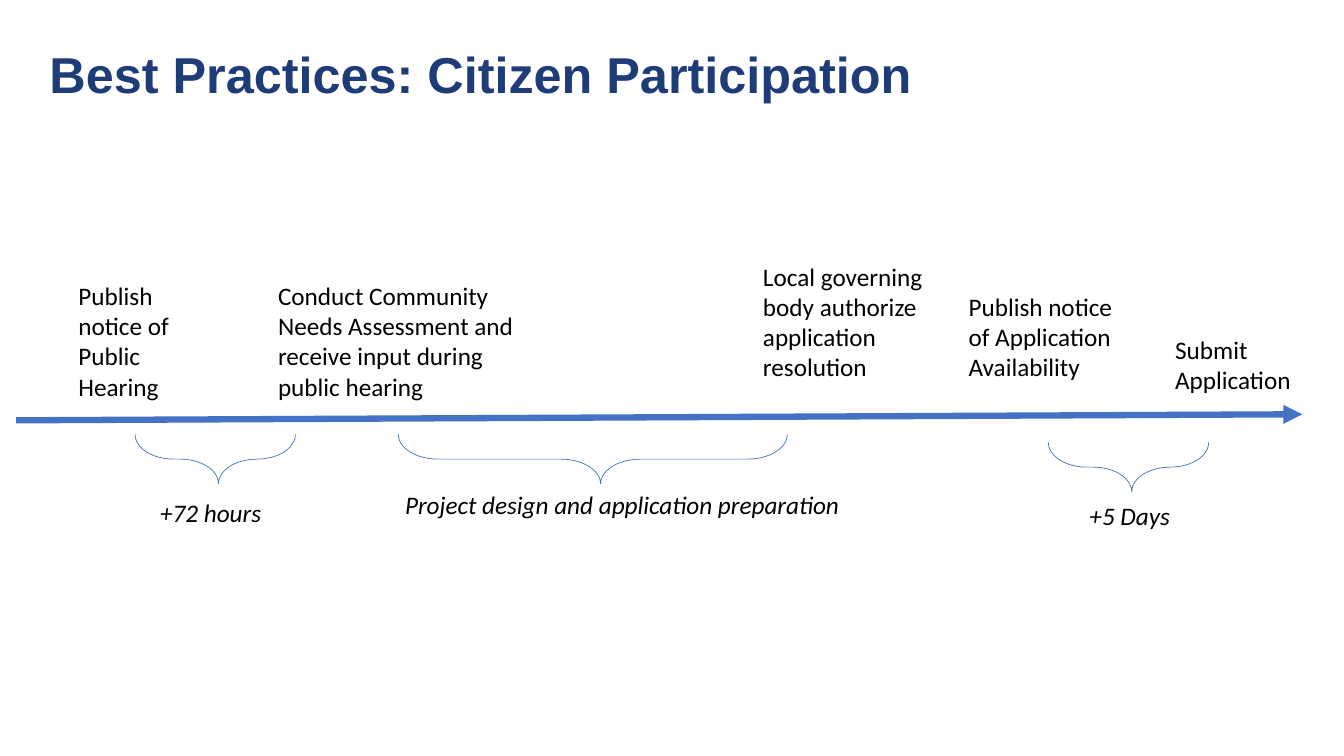
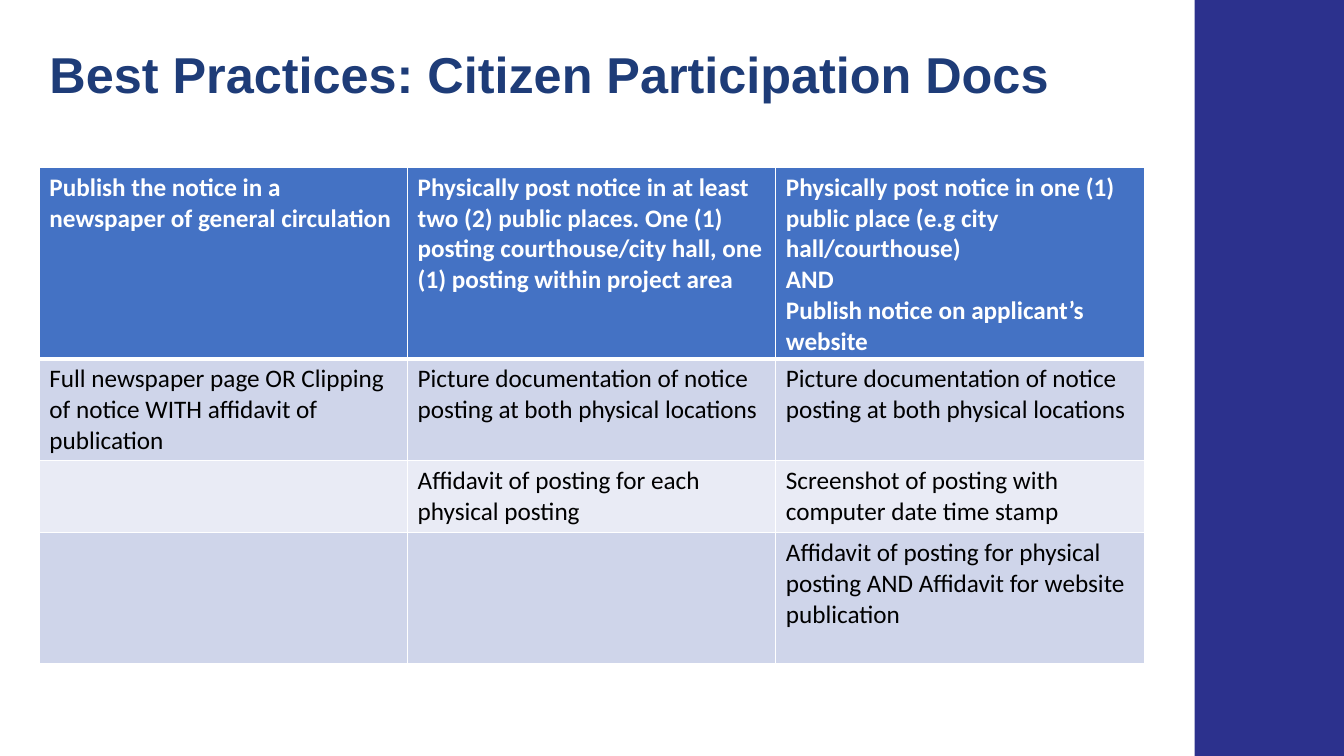
from lxml import etree
from pptx import Presentation
from pptx.dml.color import RGBColor
from pptx.enum.shapes import MSO_CONNECTOR, MSO_SHAPE as Shape
from pptx.enum.text import MSO_AUTO_SIZE
from pptx.oxml.ns import qn
from pptx.util import Inches, Pt

# Shared style
NAVY = RGBColor(0x1E, 0x3C, 0x78)
BLUE = RGBColor(0x44, 0x72, 0xC4)
INDIGO = RGBColor(0x2C, 0x31, 0x8D)
BAND_DARK = RGBColor(0xCF, 0xD5, 0xEA)
BAND_LIGHT = RGBColor(0xE9, 0xEB, 0xF5)
BLACK = RGBColor(0, 0, 0)
WHITE = RGBColor(0xFF, 0xFF, 0xFF)

TITLE = {"name": "Arial", "size": Pt(36), "bold": True, "italic": False}
BODY = {"name": "Calibri", "size": Pt(18), "bold": False, "italic": False}
HEADING = BODY | {"bold": True}
SPAN_LABEL = BODY | {"italic": True}

# All lengths below are percentages of the slide's width or height
WIDTH, HEIGHT = Inches(13.333), Inches(7.5)

# Slide 1: (text, left, top, width, height)
TIMELINE_TITLE = ("Best Practices: Citizen Participation", 72.45)
TIMELINE = (1.2, 55.6, 96.9, 54.8)
MILESTONES = [
    ("Publish notice of Public Hearing", 5.1, 36.4, 8.85, 17.47),
    ("Conduct Community Needs Assessment and receive input during public hearing",
     19.95, 36.4, 19.65, 17.47),
    ("Local governing body authorize application resolution", 56.03, 33.87, 13.35, 21.6),
    ("Publish notice of Application Availability", 71.33, 37.87, 13.35, 13.47),
    ("Submit Application", 86.7, 43.6, 13.35, 9.47),
]
LABEL_HEIGHT, BRACE_DEPTH = 5.33, 6.53
# (label, (left, top, width) of label, (left, top, width) of brace)
SPANS = [
    ("+72 hours", (11.18, 65.07, 9.68), (10.05, 57.47, 11.93)),
    ("Project design and application preparation",
     (29.4, 64.13, 37.88), (29.63, 57.47, 28.95)),
    ("+5 Days", (80.33, 65.47, 9.68), (78, 58.53, 11.93)),
]

# Slide 2
DOCS_TITLE = ("Best Practices: Citizen Participation Docs", 78)
SIDE_BAND = (88.88, 0, 11.12, 100)
TABLE_LEFT, TABLE_TOP, TABLE_WIDTH = 2.93, 22.13, 82.2
BOTH_PLACES = "Picture documentation of notice posting at both physical locations"
# (row height, fill, cells)
DOCS = [
    (25.33, BLUE, [
        "Publish the notice in a newspaper of general circulation",
        "Physically post notice in at least two (2) public places. One (1) posting "
        "courthouse/city hall, one (1) posting within project area",
        "Physically post notice in one (1) public place (e.g city hall/courthouse)\n"
        "AND\nPublish notice on applicant’s website"]),
    (13.47, BAND_DARK, [
        "Full newspaper page OR Clipping of notice WITH affidavit of publication",
        BOTH_PLACES, BOTH_PLACES]),
    (9.53, BAND_LIGHT, [
        "", "Affidavit of posting for each physical posting",
        "Screenshot of posting with computer date time stamp"]),
    (17.33, BAND_DARK, [
        "", "", "Affidavit of posting for physical posting AND Affidavit for website "
        "publication"]),
]


def across(share):
    return round(WIDTH * share / 100)


def down(share):
    return round(HEIGHT * share / 100)


def place(left, top, width, height):
    return across(left), down(top), across(width), down(height)


def write(frame, text, style, color):
    frame.text = text
    for paragraph in frame.paragraphs:
        for attribute, value in style.items():
            setattr(paragraph.font, attribute, value)
        paragraph.font.color.rgb = color


def add_text(slide, text, box, style=BODY, color=BLACK):
    frame = slide.shapes.add_textbox(*place(*box)).text_frame
    frame.word_wrap = True
    frame.auto_size = MSO_AUTO_SIZE.SHAPE_TO_FIT_TEXT
    write(frame, text, style, color)
    return frame


def add_title(slide, text, width):
    frame = add_text(slide, text, (3.38, 5.47, width, 8.67), TITLE, NAVY)
    insets = {"margin_left": 0.04, "margin_right": 0.04,
              "margin_top": 0.02, "margin_bottom": 0.02}
    for side, inset in insets.items():
        setattr(frame, side, Inches(inset))


def add_timeline(slide):
    x1, y1, x2, y2 = TIMELINE
    arrow = slide.shapes.add_connector(
        MSO_CONNECTOR.STRAIGHT, across(x1), down(y1), across(x2), down(y2))
    arrow.line.color.rgb = BLUE
    arrow.line.width = Pt(4.5)
    etree.SubElement(arrow.line._get_or_add_ln(), qn("a:tailEnd"), type="triangle")
    etree.SubElement(arrow._element.spPr, qn("a:effectLst"))


def add_brace(slide, left, top, width):
    """Turn a right brace a quarter about its centre so it points down."""
    x, y, span, depth = place(left, top, width, BRACE_DEPTH)
    brace = slide.shapes.add_shape(
        Shape.RIGHT_BRACE, x + (span - depth) // 2, y + (depth - span) // 2, depth, span)
    brace.rotation = 90
    brace.adjustments[0], brace.adjustments[1] = 0.81, 0.48
    brace.shadow.inherit = False
    brace.fill.background()
    brace.line.color.rgb = BLUE
    brace.line.width = Pt(0.5)


def set_borders(cell, top, bottom):
    properties = cell._tc.get_or_add_tcPr()
    for side, points in (("L", 1), ("R", 1), ("T", top), ("B", bottom)):
        edge = etree.SubElement(properties, qn(f"a:ln{side}"), w=str(Pt(points)))
        fill = etree.SubElement(edge, qn("a:solidFill"))
        etree.SubElement(fill, qn("a:srgbClr"), val=str(WHITE))


def add_docs_table(slide):
    columns = len(DOCS[0][2])
    total = sum(height for height, _, _ in DOCS)
    table = slide.shapes.add_table(
        len(DOCS), columns, *place(TABLE_LEFT, TABLE_TOP, TABLE_WIDTH, total)).table
    for column in table.columns:
        column.width = across(TABLE_WIDTH / columns)
    for r, (height, fill, texts) in enumerate(DOCS):
        table.rows[r].height = down(height)
        style, color = (HEADING, WHITE) if r == 0 else (BODY, BLACK)
        for c, text in enumerate(texts):
            cell = table.cell(r, c)
            set_borders(cell, top=3 if r == 1 else 1, bottom=3 if r == 0 else 1)
            cell.fill.solid()
            cell.fill.fore_color.rgb = fill
            write(cell.text_frame, text, style, color)


def build_timeline_slide(slide):
    add_title(slide, *TIMELINE_TITLE)
    add_timeline(slide)
    for text, *box in MILESTONES:
        add_text(slide, text, box)
    for label, label_place, brace_place in SPANS:
        add_text(slide, label, (*label_place, LABEL_HEIGHT), SPAN_LABEL)
        add_brace(slide, *brace_place)


def build_docs_slide(slide):
    band = slide.shapes.add_shape(Shape.RECTANGLE, *place(*SIDE_BAND))
    band.shadow.inherit = False
    band.fill.solid()
    band.fill.fore_color.rgb = INDIGO
    band.line.fill.background()
    add_title(slide, *DOCS_TITLE)
    add_docs_table(slide)


def main():
    deck = Presentation()
    deck.slide_width, deck.slide_height = WIDTH, HEIGHT
    for build in (build_timeline_slide, build_docs_slide):
        build(deck.slides.add_slide(deck.slide_layouts[6]))
    deck.save("out.pptx")


if __name__ == "__main__":
    main()
